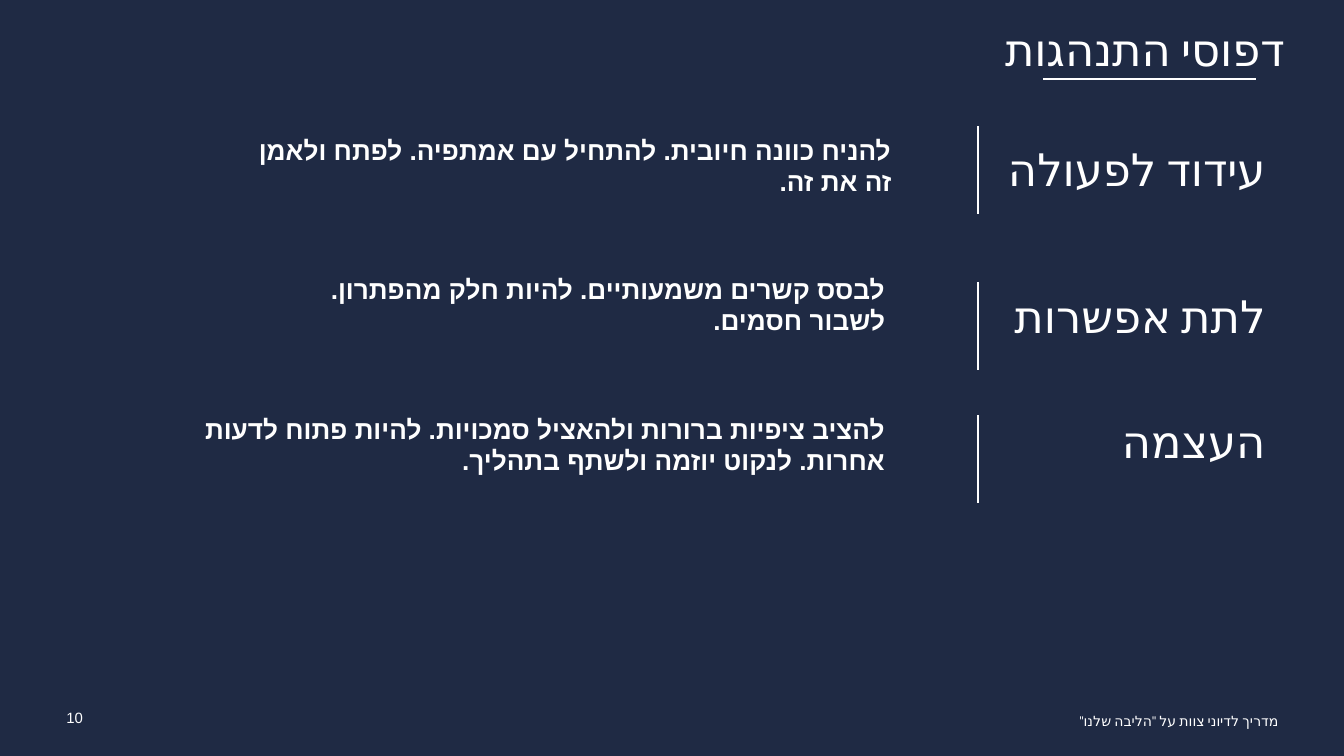
"""Build the behaviour patterns slide: three labelled rows of right-to-left text."""

from dataclasses import dataclass

from lxml.etree import SubElement
from pptx import Presentation
from pptx.dml.color import RGBColor
from pptx.enum.lang import MSO_LANGUAGE_ID as Language
from pptx.enum.shapes import MSO_CONNECTOR as Connector
from pptx.enum.text import MSO_ANCHOR as Anchor, MSO_AUTO_SIZE as AutoSize, PP_ALIGN as Align
from pptx.oxml.ns import qn
from pptx.util import Cm, Pt

COLORS = {"background": "1F2A44", "text": "FFFFFF"}
LABEL_LEFT, LABEL_WIDTH, LABEL_HEIGHT = 18.36, 5.56, 1.7
DIVIDER_LEFT, DIVIDER_LENGTH = 18.49, 1.66


@dataclass(frozen=True)
class Area:
    left: float
    top: float
    width: float
    height: float


@dataclass(frozen=True)
class Style:
    size: float
    font: str = "Arial Narrow"
    hebrew_font: str = "Arial Narrow"
    bold: bool = False
    align: Align = Align.RIGHT
    anchor: Anchor = Anchor.TOP
    spacing: float = 1.0
    top_inset: float = 0


@dataclass(frozen=True)
class Pattern:
    label: str
    label_top: float
    divider_top: float
    description: str
    area: Area


TITLE = Style(24, align=Align.CENTER, anchor=Anchor.MIDDLE, spacing=0.9)
LABEL = Style(24, anchor=Anchor.MIDDLE, spacing=0.9)
DESCRIPTION = Style(14, hebrew_font="Arial", bold=True)
NUMBER = Style(8, font="Arial", hebrew_font="Arial", top_inset=0.03)
FOOTER = Style(7.5, top_inset=0.05)

PATTERNS = [
    Pattern("עידוד לפעולה", 2.41, 2.39,
            "להניח כוונה חיובית. להתחיל עם אמתפיה. לפתח ולאמן זה את זה.",
            Area(4.33, 2.54, 12.52, 2.01)),
    Pattern("לתת אפשרות", 5.18, 5.33,
            "לבסס קשרים משמעותיים. להיות חלק מהפתרון. לשבור חסמים.",
            Area(5.07, 5.16, 11.66, 1.7)),
    Pattern("העצמה", 7.54, 7.85,
            "להציב ציפיות ברורות ולהאציל סמכויות. להיות פתוח לדעות אחרות. לנקוט יוזמה ולשתף בתהליך.",
            Area(3.04, 7.81, 13.69, 1.7)),
]


def write(box, area: Area, text: str, style: Style) -> None:
    """Place a box and fill it with one right-to-left paragraph."""
    box.left, box.top = Cm(area.left), Cm(area.top)
    box.width, box.height = Cm(area.width), Cm(area.height)
    frame = box.text_frame
    frame.text = text
    frame.word_wrap = True
    frame.auto_size = AutoSize.NONE
    frame.vertical_anchor = style.anchor
    frame.margin_left = frame.margin_right = frame.margin_bottom = 0
    frame.margin_top = Cm(style.top_inset)
    para = frame.paragraphs[0]
    para.alignment = style.align
    para.line_spacing = style.spacing
    para.space_before = Pt(0)
    properties = para._p.get_or_add_pPr()
    for name, value in (("marL", "0"), ("indent", "0"), ("rtl", "1")):
        properties.set(name, value)
    SubElement(properties, qn("a:buNone"))
    span = para.runs[0]
    span.font.size = Pt(style.size)
    span.font.bold = style.bold
    span.font.name = style.font
    span.font.language_id = Language.HEBREW
    span.font.color.rgb = RGBColor.from_string(COLORS["text"])
    SubElement(span._r.get_or_add_rPr(), qn("a:cs"), typeface=style.hebrew_font)


def add_text(page, area: Area, text: str, style: Style) -> None:
    """Add a text box."""
    write(page.shapes.add_textbox(0, 0, 0, 0), area, text, style)


def add_rule(page, left: float, top: float, right: float, bottom: float) -> None:
    """Add a thin straight line."""
    rule = page.shapes.add_connector(
        Connector.STRAIGHT, Cm(left), Cm(top), Cm(right), Cm(bottom))
    rule.line.width = Pt(1)
    rule.line.color.rgb = RGBColor.from_string(COLORS["text"])
    SubElement(rule._element.spPr, qn("a:effectLst"))


def main() -> None:
    """Build and save the deck."""
    deck = Presentation()
    deck.slide_width, deck.slide_height = Cm(25.4), Cm(14.29)
    page = deck.slides.add_slide(deck.slide_layouts.get_by_name("Comparison"))
    page.background.fill.solid()
    page.background.fill.fore_color.rgb = RGBColor.from_string(COLORS["background"])

    title, *bodies = page.placeholders
    write(title, Area(18.39, 0.08, 6.5, 1.8), "דפוסי התנהגות", TITLE)
    add_rule(page, 19.72, 1.5, 23.74, 1.5)

    for pattern, body in zip(PATTERNS, bodies):
        write(body, pattern.area, pattern.description, DESCRIPTION)
        label_area = Area(LABEL_LEFT, pattern.label_top, LABEL_WIDTH, LABEL_HEIGHT)
        add_text(page, label_area, pattern.label, LABEL)
        add_rule(page, DIVIDER_LEFT, pattern.divider_top,
                 DIVIDER_LEFT, pattern.divider_top + DIVIDER_LENGTH)
    for unused in bodies[len(PATTERNS):]:
        unused._element.getparent().remove(unused._element)

    add_text(page, Area(0.3, 13.36, 1.27, 0.51), "10", NUMBER)
    add_text(page, Area(13.11, 13.41, 11.05, 0.51), 'מדריך לדיוני צוות על "הליבה שלנו"', FOOTER)
    deck.save("out.pptx")


if __name__ == "__main__":
    main()
